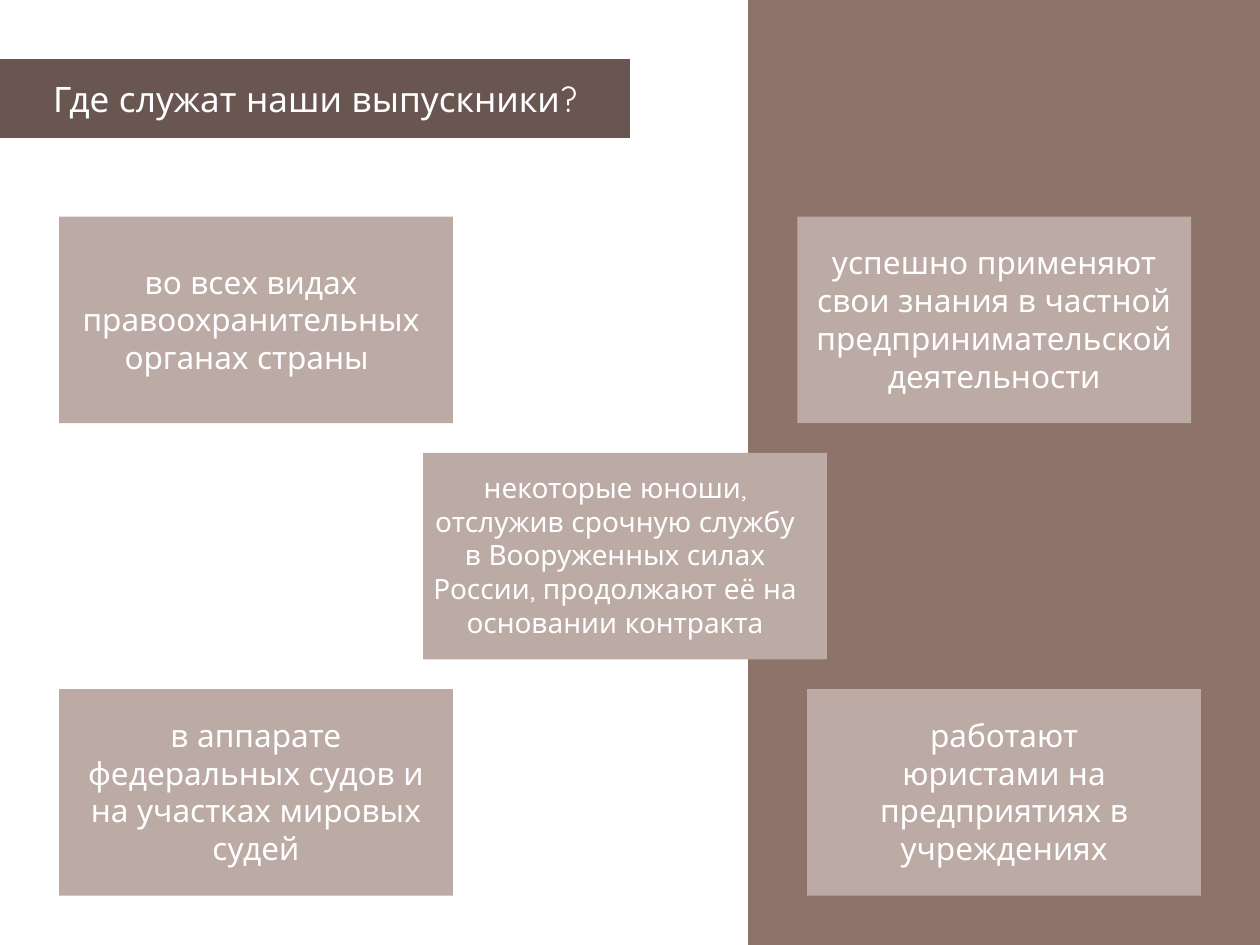
from pptx import Presentation
from pptx import util as u
from pptx.dml import color
from pptx.enum import shapes, text

COLORS = {
    "panel": "8E736A",
    "card": "BCABA5",
    "title": "6A5650",
    "text": "FFFFFF",
}
FONT = "Quicksand"
CARD_WIDTH, CARD_HEIGHT = 225, 118.13
FIRST_ROW, ROW_STEP = 123.75, 135


class SlideBuilder:
    def __init__(self, slide):
        self.slide = slide

    def fill(self, shape, color_name):
        shape.fill.solid()
        shape.fill.fore_color.rgb = color.RGBColor.from_string(COLORS[color_name])

    def place(self, shape, left, top, width, height):
        shape.left, shape.top = u.Pt(left), u.Pt(top)
        shape.width, shape.height = u.Pt(width), u.Pt(height)

    def add_words(self, shape, words, size, anchor):
        frame = shape.text_frame
        frame.word_wrap = True
        frame.auto_size = text.MSO_AUTO_SIZE.NONE
        frame.vertical_anchor = anchor
        paragraph = frame.paragraphs[0]
        paragraph.alignment = text.PP_ALIGN.CENTER
        run = paragraph.add_run()
        run.text = words
        run.font.name = FONT
        run.font.size = u.Pt(size)
        run.font.color.rgb = color.RGBColor.from_string(COLORS["text"])

    def rectangle(self, left, top, width, height, color_name):
        box = [u.Pt(value) for value in (left, top, width, height)]
        shape = self.slide.shapes.add_shape(shapes.MSO_SHAPE.RECTANGLE, *box)
        shape.shadow.inherit = False
        shape.line.fill.background()
        self.fill(shape, color_name)

    def label(self, left, top, width, height, words, size):
        box = [u.Pt(value) for value in (left, top, width, height)]
        shape = self.slide.shapes.add_textbox(*box)
        self.add_words(shape, words, size, text.MSO_ANCHOR.TOP)

    def title(self, left, top, width, height, words):
        shape = self.slide.shapes.title
        self.place(shape, left, top, width, height)
        self.fill(shape, "title")
        self.add_words(shape, words, 20, text.MSO_ANCHOR.MIDDLE)


def main():
    presentation = Presentation()
    presentation.slide_width, presentation.slide_height = u.Pt(720), u.Pt(540)
    slide = presentation.slides.add_slide(presentation.slide_layouts[5])
    builder = SlideBuilder(slide)

    builder.rectangle(427.5, 0, 292.5, 540, "panel")
    builder.title(0, 33.75, 360, 45, "Где служат наши выпускники?")

    cards = [
        (0, 33.75, CARD_WIDTH, 39.4, 208.1, 72.7, 18,
         "во всех видах правоохранительных органах страны "),
        (0, 455.63, CARD_WIDTH, 455.63, CARD_WIDTH, 94.5, 18,
         "успешно применяют свои знания в частной предпринимательской деятельности"),
        (1, 241.88, 230.63, 236.25, 230.63, 104.7, 16,
         "некоторые юноши, отслужив срочную службу в Вооруженных силах России, "
         "продолжают её на основании контракта"),
        (2, 33.75, CARD_WIDTH, 33.75, CARD_WIDTH, 94.5, 18,
         "в аппарате федеральных судов и на участках мировых судей"),
        (2, 461.25, CARD_WIDTH, 478.1, 191.3, 94.5, 18,
         "работают юристами на предприятиях в учреждениях"),
    ]
    for row, left, width, text_left, text_width, text_height, size, words in cards:
        top = FIRST_ROW + row * ROW_STEP
        text_top = top + (CARD_HEIGHT - text_height) / 2
        builder.rectangle(left, top, width, CARD_HEIGHT, "card")
        builder.label(text_left, text_top, text_width, text_height, words, size)

    presentation.save("out.pptx")


if __name__ == "__main__":
    main()
